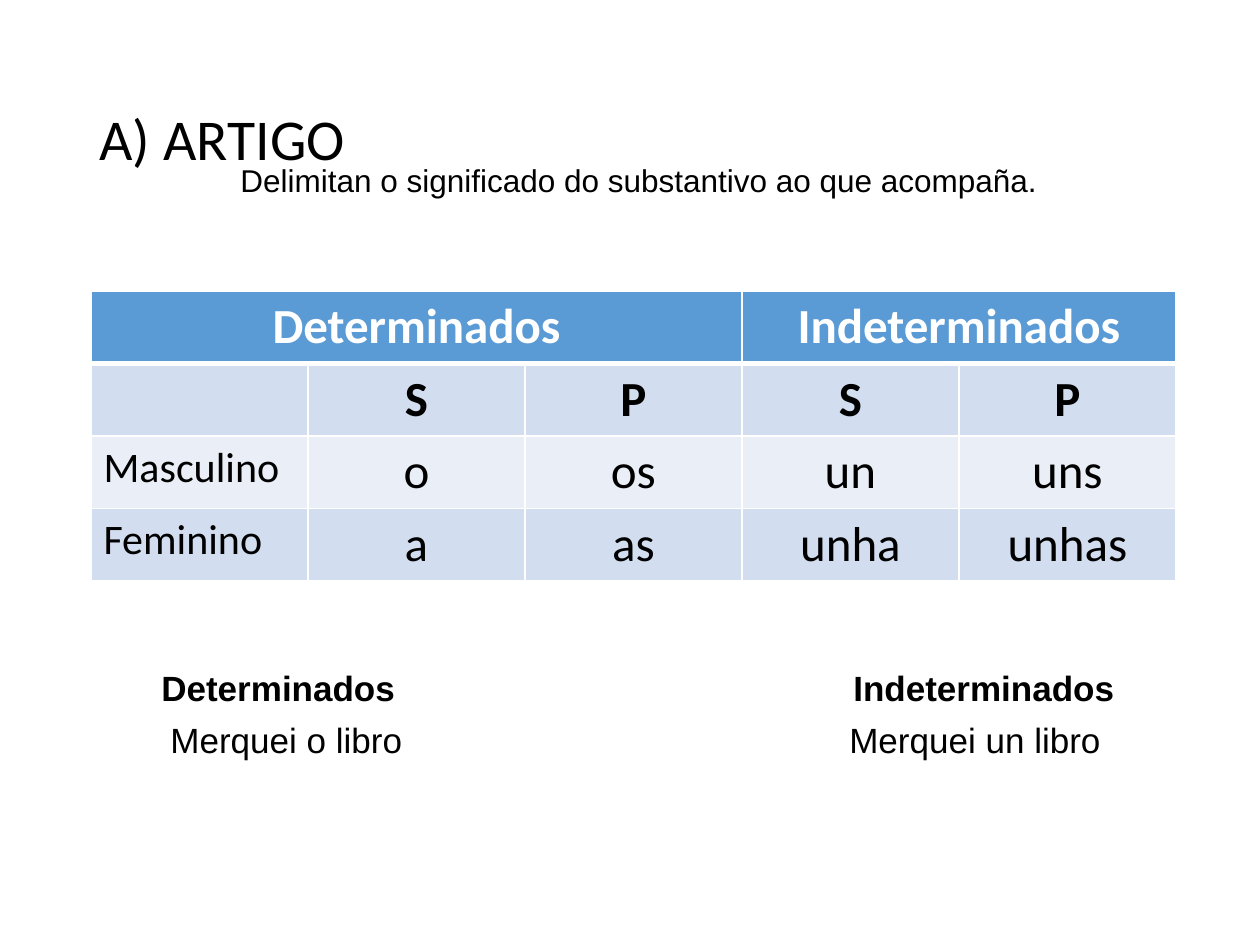
from dataclasses import dataclass

from lxml import etree
from pptx import Presentation
from pptx import util as u
from pptx.dml.color import RGBColor
from pptx.enum import text
from pptx.oxml import ns

SCALE = 914400 / 126  # EMU in one px
HUES = {
    "ink": "000000",
    "white": "FFFFFF",
    "head": "5B9BD5",
    "dark": "D2DEEF",
    "light": "EAEFF7",
}
THIN, THICK = 0.96, 3
LEFT, CENTER = text.PP_ALIGN.LEFT, text.PP_ALIGN.CENTER


@dataclass
class Box:
    left: int
    top: int
    width: int
    height: int

    def emu(self) -> list:
        return [px(n) for n in (self.left, self.top, self.width, self.height)]


@dataclass
class Style:
    size: int
    face: str = "Calibri"
    hue: str = "ink"
    bold: bool = False
    align: text.PP_ALIGN = LEFT


@dataclass
class Row:
    words: list
    fill: str
    first: Style
    rest: Style
    top: float = THIN
    base: float = THIN


def px(count: int) -> u.Emu:
    return u.Emu(round(count * SCALE))


def format_para(para, style: Style) -> None:
    para.alignment = style.align
    for run in para.runs:
        font = run.font
        font.size, font.name, font.bold = u.Pt(style.size), style.face, style.bold
        font.color.rgb = RGBColor.from_string(HUES[style.hue])


def add_edges(cell, top: float, base: float) -> None:
    """Draw the white rules round a cell, in points."""
    props = cell._tc.get_or_add_tcPr()
    for spot, (side, width) in enumerate(zip("LRTB", (THIN, THIN, top, base))):
        line = etree.Element(ns.qn(f"a:ln{side}"), w=str(u.Pt(width)))
        fill = etree.SubElement(line, ns.qn("a:solidFill"))
        etree.SubElement(fill, ns.qn("a:srgbClr"), val=HUES["white"])
        props.insert(spot, line)


def add_stops(para, stops: list) -> None:
    tabs = etree.SubElement(para._p.get_or_add_pPr(), ns.qn("a:tabLst"))
    for stop in stops:
        etree.SubElement(tabs, ns.qn("a:tab"), pos=str(px(stop)), algn="l")


def add_text(slide, box: Box, words: str):
    frame = slide.shapes.add_textbox(*box.emu()).text_frame
    frame.word_wrap = True
    frame.text = words
    return frame


def add_grid(slide, box: Box, rows: list, spans: list) -> None:
    count = len(rows[0].words)
    grid = slide.shapes.add_table(len(rows), count, *box.emu()).table
    grid.horz_banding = False
    for y, row in enumerate(rows):
        for x, word in enumerate(row.words):
            cell = grid.cell(y, x)
            cell.text = word
            format_para(cell.text_frame.paragraphs[0], row.rest if x else row.first)
            add_edges(cell, row.top, row.base)
            cell.fill.solid()
            cell.fill.fore_color.rgb = RGBColor.from_string(HUES[row.fill])
    for start, end in spans:
        grid.cell(0, start).merge(grid.cell(0, end))


def main() -> None:
    deck = Presentation()
    deck.slide_width, deck.slide_height = u.Inches(10), u.Inches(7.5)
    slide = deck.slides.add_slide(deck.slide_layouts[5])

    title = slide.shapes.title
    title.left, title.top, title.width, title.height = Box(87, 50, 1086, 183).emu()
    frame = title.text_frame
    frame.text = "A) ARTIGO"
    frame.auto_size = text.MSO_AUTO_SIZE.NONE
    frame.vertical_anchor = text.MSO_ANCHOR.MIDDLE
    frame.paragraphs[0].line_spacing = 0.9
    format_para(frame.paragraphs[0], Style(33))

    head = Style(28, hue="white", bold=True, align=CENTER)
    sub = Style(28, bold=True, align=CENTER)
    name, form = Style(24), Style(28, align=CENTER)
    rows = [
        Row(["Determinados", "", "", "Indeterminados", ""], "head", head, head, base=THICK),
        Row(["", "S", "P", "S", "P"], "dark", sub, sub, top=THICK),
        Row(["Masculino", "o", "os", "un", "uns"], "light", name, form),
        Row(["Feminino", "a", "as", "unha", "unhas"], "dark", name, form),
    ]
    add_grid(slide, Box(91, 291, 1085, 288), rows, [(0, 2), (3, 4)])

    lines = [
        ("\tDeterminados\tIndeterminados", [58, 750], True),
        ("\tMerquei o libro\tMerquei un libro", [67, 746], False),
    ]
    frame = add_text(slide, Box(91, 660, 1110, 105), "\n".join(line[0] for line in lines))
    for para, (_, stops, bold) in zip(frame.paragraphs, lines):
        add_stops(para, stops)
        format_para(para, Style(20, "Arial", bold=bold))
    frame.paragraphs[1].space_before = u.Pt(6)

    frame = add_text(slide, Box(228, 155, 858, 50),
                     "Delimitan o significado do substantivo ao que acompaña.")
    format_para(frame.paragraphs[0], Style(18, "Arial"))

    deck.save("out.pptx")


if __name__ == "__main__":
    main()
